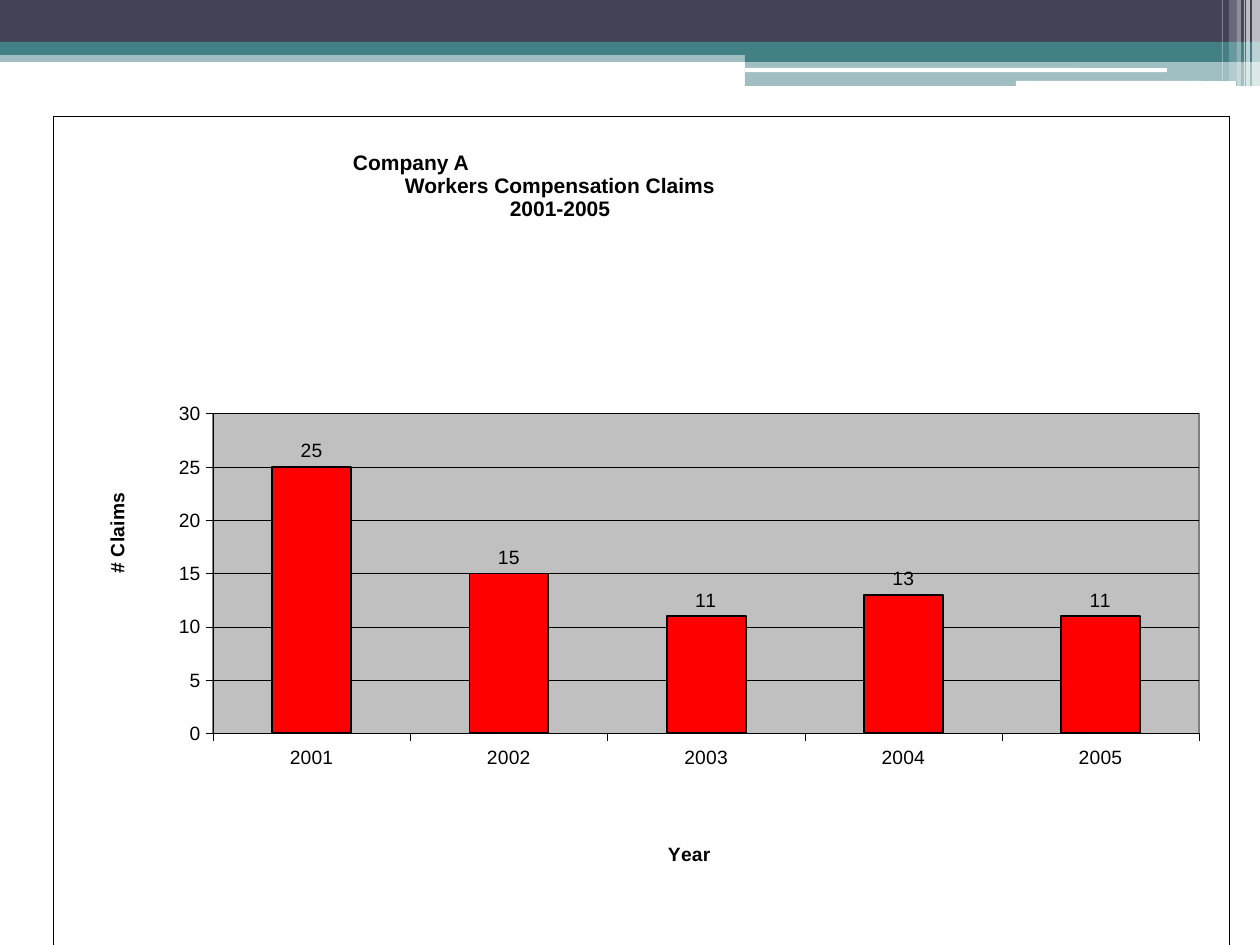
import lxml.etree
import pptx
import pptx.chart.data
import pptx.dml.color
import pptx.enum.chart
import pptx.enum.shapes
import pptx.enum.text
import pptx.oxml
import pptx.oxml.ns
import pptx.util

RGBColor = pptx.dml.color.RGBColor
WHITE = RGBColor(0xFF, 0xFF, 0xFF)
BLACK = RGBColor(0, 0, 0)
NAVY = RGBColor(0x42, 0x44, 0x56)
TEAL = RGBColor(0x43, 0x80, 0x86)
RED = RGBColor(0xFF, 0, 0)
SILVER = RGBColor(0xC0, 0xC0, 0xC0)
GRAY = RGBColor(0x80, 0x80, 0x80)

FONT = "Arial"
PX = 914400 / 126
SLIDE_SIZE = (1260, 945)
HAIRLINE = pptx.util.Pt(0.25)
qn = pptx.oxml.ns.qn


def emu(*lengths):
    return [round(length * PX) for length in lengths]


def style_font(font, size, bold=False):
    font.name = FONT
    font.size = pptx.util.Pt(size)
    font.bold = bold
    font.color.rgb = BLACK


def style_line(line, color, width):
    line.color.rgb = color
    line.width = width


def add_band(slide, box, color, opacity=100, rounded=False):
    kinds = pptx.enum.shapes.MSO_SHAPE
    kind = kinds.ROUNDED_RECTANGLE if rounded else kinds.RECTANGLE
    shape = slide.shapes.add_shape(kind, *emu(*box))
    shape.shadow.inherit = False
    shape.fill.solid()
    shape.fill.fore_color.rgb = color
    shape.line.fill.background()
    if opacity < 100:
        color_element = shape.element.find(".//" + qn("a:srgbClr"))
        alpha = lxml.etree.SubElement(color_element, qn("a:alpha"))
        alpha.set("val", str(opacity * 1000))


def add_header(slide, left, top, width):
    right = left + width
    step = left + 745
    # Full-width bands and the deeper block on the right
    add_band(slide, (left, top + 50, width, 12), TEAL, 50)
    add_band(slide, (left, top, width, 42), NAVY)
    add_band(slide, (left, top + 42, width, 13), TEAL)
    add_band(slide, (step, top + 49, right - step, 13), TEAL)
    add_band(slide, (step, top + 61, right - step, 25), TEAL, 50)
    # White bars cut into the block
    add_band(slide, (step, top + 68, 422, 4), WHITE, rounded=True)
    add_band(slide, (left + 1016, top + 81, 220, 5), WHITE, rounded=True)
    # Translucent stripes: distance from the right edge, width, height, opacity
    stripes = [(8, 8, 86, 65), (14, 4, 86, 65), (16, 1, 86, 60),
               (23, 4, 86, 40), (31, 8, 81, 20), (38, 1, 81, 30)]
    for distance, stripe_width, height, opacity in stripes:
        add_band(slide, (right - distance, top, stripe_width, height), WHITE, opacity)


def shape_properties(fill, line, width):
    namespaces = pptx.oxml.ns.nsdecls("c", "a")
    return pptx.oxml.parse_xml(
        f'<c:spPr {namespaces}><a:solidFill><a:srgbClr val="{fill}"/></a:solidFill>'
        f'<a:ln w="{width}"><a:solidFill><a:srgbClr val="{line}"/></a:solidFill></a:ln>'
        f'</c:spPr>')


def set_layout(parent, index, values):
    """Give a chart part a manual layout as fractions of the chart."""
    for existing in parent.findall(qn("c:layout")):
        parent.remove(existing)
    layout = lxml.etree.Element(qn("c:layout"))
    manual = lxml.etree.SubElement(layout, qn("c:manualLayout"))
    for name, value in values.items():
        lxml.etree.SubElement(manual, qn("c:" + name)).set("val", str(value))
    parent.insert(index, layout)


def style_axis(axis, title, x, y):
    style_font(axis.tick_labels.font, 11)
    style_line(axis.format.line, BLACK, HAIRLINE)
    axis.major_tick_mark = pptx.enum.chart.XL_TICK_MARK.OUTSIDE
    axis.minor_tick_mark = pptx.enum.chart.XL_TICK_MARK.NONE
    text_frame = axis.axis_title.text_frame
    text_frame.text = title
    style_font(text_frame.paragraphs[0].font, 11, bold=True)
    set_layout(axis.axis_title._element, 1,
               {"xMode": "edge", "yMode": "edge", "x": x, "y": y})


def add_claims_chart(slide, box):
    data = pptx.chart.data.CategoryChartData()
    data.categories = ["2001", "2002", "2003", "2004", "2005"]
    data.add_series("Series 1", (25, 15, 11, 13, 11))
    chart = slide.shapes.add_chart(
        pptx.enum.chart.XL_CHART_TYPE.COLUMN_CLUSTERED, *emu(*box), data).chart
    chart.has_title = False
    chart.has_legend = False
    style_font(chart.font, 11)

    # Columns and their values
    plot = chart.plots[0]
    plot.gap_width = 150
    plot.vary_by_categories = False
    series = plot.series[0]
    series.format.fill.solid()
    series.format.fill.fore_color.rgb = RED
    style_line(series.format.line, BLACK, pptx.util.Pt(1))
    plot.has_data_labels = True
    labels = plot.data_labels
    labels.show_value = True
    labels.position = pptx.enum.chart.XL_LABEL_POSITION.OUTSIDE_END
    style_font(labels.font, 11)

    # Axes
    style_axis(chart.category_axis, "Year", 0.52, 0.87)
    value_axis = chart.value_axis
    style_axis(value_axis, "# Claims", 0.04, 0.45)
    body = value_axis.axis_title.text_frame._txBody.find(qn("a:bodyPr"))
    body.set("rot", "-5400000")
    body.set("vert", "horz")
    value_axis.minimum_scale = 0
    value_axis.maximum_scale = 30
    value_axis.major_unit = 5
    value_axis.has_major_gridlines = True
    style_line(value_axis.major_gridlines.format.line, BLACK, HAIRLINE)

    # Plot area and frame
    chart_element = chart.element.find(qn("c:chart"))
    plot_area = chart_element.find(qn("c:plotArea"))
    set_layout(plot_area, 0, {"layoutTarget": "inner", "xMode": "edge", "yMode": "edge",
                              "x": 0.136, "y": 0.359, "w": 0.839, "h": 0.386})
    plot_area.append(shape_properties(SILVER, GRAY, pptx.util.Pt(1)))
    chart_element.addnext(shape_properties(WHITE, BLACK, HAIRLINE))


def add_title(slide, box):
    title = slide.shapes.title
    title.left, title.top, title.width, title.height = emu(*box)
    # Bring the title in front of the chart frame
    title.element.getparent().append(title.element)
    frame = title.text_frame
    frame.margin_left = frame.margin_right = frame.margin_top = frame.margin_bottom = 0
    frame.vertical_anchor = pptx.enum.text.MSO_ANCHOR.TOP
    frame.auto_size = pptx.enum.text.MSO_AUTO_SIZE.NONE
    frame.word_wrap = True
    frame.text = "Company A\nWorkers Compensation Claims\n2001-2005"
    for paragraph in frame.paragraphs:
        paragraph.alignment = pptx.enum.text.PP_ALIGN.CENTER
        paragraph.line_spacing = 0.91
        paragraph.space_before = pptx.util.Pt(0)
        style_font(paragraph.font, 12, bold=True)
    frame.paragraphs[0].alignment = pptx.enum.text.PP_ALIGN.LEFT


def main():
    presentation = pptx.Presentation()
    presentation.slide_width, presentation.slide_height = emu(*SLIDE_SIZE)
    slide = presentation.slides.add_slide(presentation.slide_layouts[5])
    add_header(slide, 0, 0, SLIDE_SIZE[0])
    add_claims_chart(slide, (53, 116, 1176, 829))
    add_title(slide, (353, 152, 414, 68))
    presentation.save("out.pptx")


if __name__ == "__main__":
    main()
